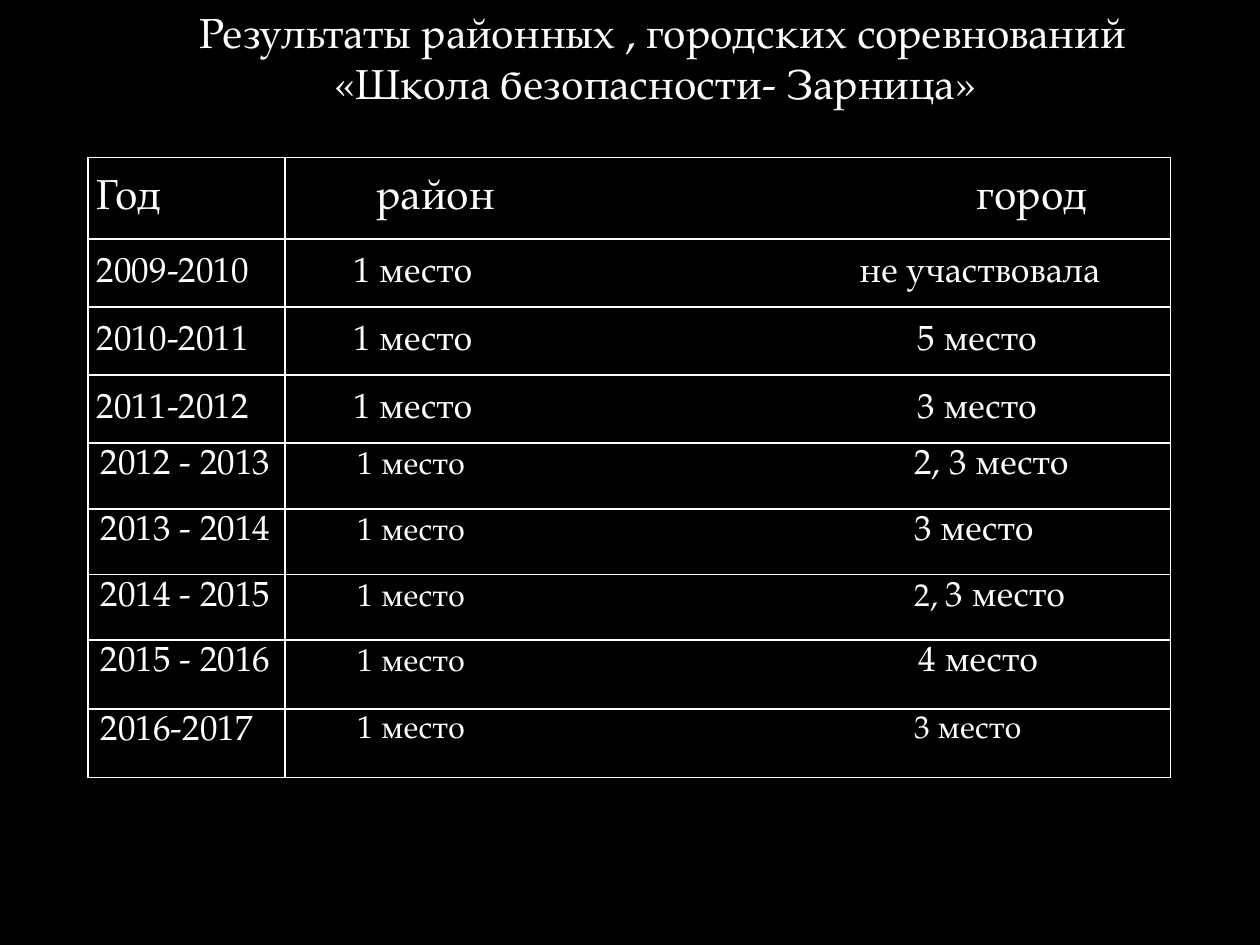
from pptx import Presentation
from pptx.dml.color import RGBColor
from pptx.enum.text import MSO_ANCHOR, PP_ALIGN
from pptx.oxml import parse_xml
from pptx.oxml.ns import nsdecls
from pptx.util import Pt

WHITE = RGBColor(0xFF, 0xFF, 0xFF)
BLACK = RGBColor(0, 0, 0)
FONT = "TeX Gyre Pagella"
LEFT, WIDTH, YEAR = 50.4, 618.6, 112.4

# Cell formats: the upper block has wide lines and thin insets
LOOSE = {"margin_left": Pt(5), "margin_right": Pt(5),
         "margin_top": 0, "margin_bottom": 0}
TIGHT = {"margin_left": Pt(7.2), "margin_right": Pt(7.2),
         "margin_top": Pt(3.6), "margin_bottom": Pt(3.6)}


def put(para, text, size):
    run = para.add_run()
    run.text = text
    for key, value in {"name": FONT, "size": Pt(size)}.items():
        setattr(run.font, key, value)
    run.font.color.rgb = WHITE


def set_tabs(para, stops):
    marks = "".join(f'<a:tab pos="{Pt(x)}" algn="l"/>' for x in stops)
    para._p.get_or_add_pPr().append(
        parse_xml(f'<a:tabLst {nsdecls("a")}>{marks}</a:tabLst>'))


def edge(cell):
    for num, side in enumerate(("lnL", "lnR", "lnT", "lnB")):
        cell._tc.get_or_add_tcPr().insert(num, parse_xml(
            f'<a:{side} {nsdecls("a")} w="{Pt(1)}"><a:solidFill>'
            f'<a:srgbClr val="{WHITE}"/></a:solidFill></a:{side}>'))


def add_title(slide, left, top, width, height):
    box = slide.shapes.add_textbox(Pt(left), Pt(top), Pt(width), Pt(height))
    frame = box.text_frame
    for key, value in {"word_wrap": False,
                       "vertical_anchor": MSO_ANCHOR.MIDDLE}.items():
        setattr(frame, key, value)
    lines = (("Результаты районных , городских соревнований", 27),
             ("«Школа безопасности- Зарница»", 18))
    for num, (text, shift) in enumerate(lines):
        para = frame.add_paragraph() if num else frame.paragraphs[0]
        para.alignment = PP_ALIGN.CENTER
        para._p.get_or_add_pPr().set("indent", str(Pt(shift)))
        put(para, text, 24)


def add_block(slide, left, top, width, heights, rows, form, space):
    """Each row holds a year, its size, the result runs and their tab stops."""
    table = slide.shapes.add_table(
        len(rows), 2, Pt(left), Pt(top), Pt(width), Pt(sum(heights))).table
    for key in ("first_row", "horz_banding"):
        setattr(table, key, False)
    for col, size in zip(table.columns, (YEAR, width - YEAR)):
        col.width = Pt(size)
    for line, high, (year, size, runs, stops) in zip(table.rows, heights, rows):
        line.height = Pt(high)
        for cell, parts in zip(line.cells, ([(year, size)], runs)):
            for key, value in form.items():
                setattr(cell, key, value)
            cell.fill.background()
            edge(cell)
            para = cell.text_frame.paragraphs[0]
            para.line_spacing = space
            for text, points in parts:
                put(para, text, points)
        set_tabs(para, stops)


def early(year, city, stop):
    return year, 20, [(f"\t1 место\t{city}", 20)], (34, stop)


def late(year, *city, stop=352.5):
    return year, 20, [("\t1 место\t", 18), *city], (34.5, stop)


def main():
    deck = Presentation()
    deck.slide_width, deck.slide_height = Pt(720), Pt(540)
    slide = deck.slides.add_slide(deck.slide_layouts[6])
    slide.background.fill.solid()
    slide.background.fill.fore_color.rgb = BLACK

    # Heading row and first years
    add_block(slide, LEFT, 90, WIDTH, [46.6] + [38.9] * 3, [
        ("Год", 24, [("\tрайон\tгород", 24)], (47.5, 390.5)),
        early("2009-2010", "не участвовала", 323.5),
        early("2010-2011", "5 место", 356.5),
        early("2011-2012", "3 место", 356.5)], LOOSE, 1.5)

    add_title(slide, 73.4, 0, 584, 65.5)

    # Middle years
    add_block(slide, LEFT, 253.3, WIDTH, [37.5] * 3, [
        late("2012 - 2013", ("2, 3 место", 20)),
        late("2013 - 2014", ("3 место", 20)),
        late("2014 - 2015", ("2, ", 18), ("3 место", 20))], TIGHT, 1)

    # Last years
    add_block(slide, LEFT, 365.8, WIDTH, [39.3] * 2, [
        late("2015 - 2016", ("4 место", 20), stop=355),
        late("2016-2017", ("3 место", 18))], TIGHT, 1)

    deck.save("out.pptx")


if __name__ == "__main__":
    main()
